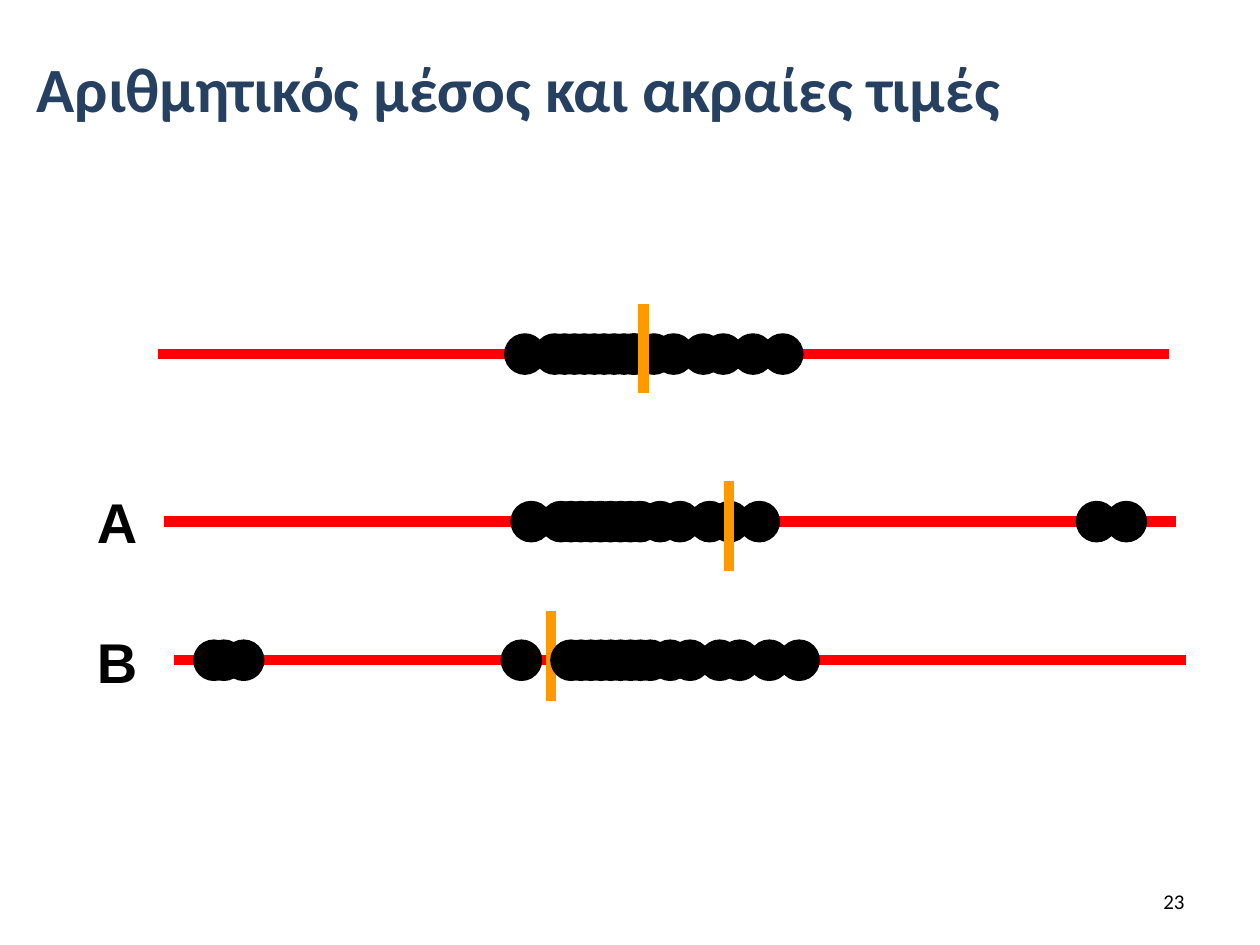
from lxml import etree
from pptx import Presentation
from pptx.dml.color import RGBColor
from pptx.enum.shapes import MSO_CONNECTOR, MSO_SHAPE
from pptx.enum.text import MSO_ANCHOR, PP_ALIGN
from pptx.oxml.ns import qn
from pptx.util import Inches, Pt

STRAIGHT, OVAL = MSO_CONNECTOR.STRAIGHT, MSO_SHAPE.OVAL
MIDDLE, TOP = MSO_ANCHOR.MIDDLE, MSO_ANCHOR.TOP
LEFT, RIGHT = PP_ALIGN.LEFT, PP_ALIGN.RIGHT
NAVY = RGBColor(0x25, 0x40, 0x61)
BLACK = RGBColor(0, 0, 0)
RED = RGBColor(0xFF, 0, 0)
ORANGE = RGBColor(0xFF, 0x99, 0)

AXIS_UNITS = 102
UNIT = 8.03 / AXIS_UNITS
DOT = 0.32
MARKER_HEIGHT = 0.71
CORE = [*range(38, 47), 48, 50, 53, 55, 58]


def write(s, text, font, size, color, bold=False, align=LEFT, anchor=TOP):
    tf = s.text_frame
    tf.text = text
    tf.word_wrap = True
    tf.vertical_anchor = anchor
    p = tf.paragraphs[0]
    p.alignment = align
    r = p.runs[0]
    r.font.name, r.font.size, r.font.bold = font, Pt(size), bold
    r.font.color.rgb = color
    return p


def add_title(slide, text, x, y, w, h):
    s = slide.shapes.title
    s.left, s.top, s.width, s.height = map(Inches, (x, y, w, h))
    p = write(s, text, "Calibri", 36, NAVY, bold=True, anchor=MIDDLE)
    p._p.get_or_add_pPr().set("marL", str(Inches(0.19)))


def add_text(slide, box, text, *style, **options):
    s = slide.shapes.add_textbox(*map(Inches, box))
    write(s, text, *style, **options)


def add_line(slide, x1, y1, x2, y2, color):
    s = slide.shapes.add_connector(STRAIGHT, *map(Inches, (x1, y1, x2, y2)))
    s.line.color.rgb = color
    s.line.width = Pt(6)
    etree.SubElement(s._element.spPr, qn("a:effectLst"))


def add_dots(slide, x, y, values):
    for value in values:
        s = slide.shapes.add_shape(OVAL, Inches(x + value * UNIT), Inches(y - DOT / 2),
                                   Inches(DOT), Inches(DOT))
        s.shadow.inherit = False
        s.fill.solid()
        s.fill.fore_color.rgb = BLACK
        s.line.color.rgb = BLACK
        s.line.width = Pt(0.75)


def add_dot_plot(slide, x, y, values, mean, marker_top, front=()):
    add_line(slide, x, y, x + AXIS_UNITS * UNIT, y, RED)
    add_dots(slide, x, y, values)
    mean_x = x + mean * UNIT
    add_line(slide, mean_x, marker_top, mean_x, marker_top + MARKER_HEIGHT, ORANGE)
    add_dots(slide, x, y, front)


def main():
    prs = Presentation()
    prs.slide_width, prs.slide_height = Inches(10), Inches(7.5)
    slide = prs.slides.add_slide(prs.slide_layouts[5])

    add_title(slide, "Αριθμητικός μέσος και ακραίες τιμές", 0, 0, 10, 1.39)
    add_dot_plot(slide, 1.25, 2.81, [35, *CORE, 46, 61], 49, 2.41)
    add_dot_plot(slide, 1.3, 4.14, [35, *CORE, 92, 95], 57, 3.82)
    add_dot_plot(slide, 1.38, 5.24, [2, 3, 5, *CORE[1:], 61], 38, 4.85, front=[33, 38])
    for label, top in (("Α", 3.82), ("Β", 4.93)):
        add_text(slide, (0.67, top, 0.47, 0.63), label, "Arial", 32, BLACK, bold=True)
    add_text(slide, (7.17, 6.95, 2.33, 0.4), "23", "Calibri", 12, BLACK,
             align=RIGHT, anchor=MIDDLE)
    prs.save("out.pptx")


if __name__ == "__main__":
    main()
